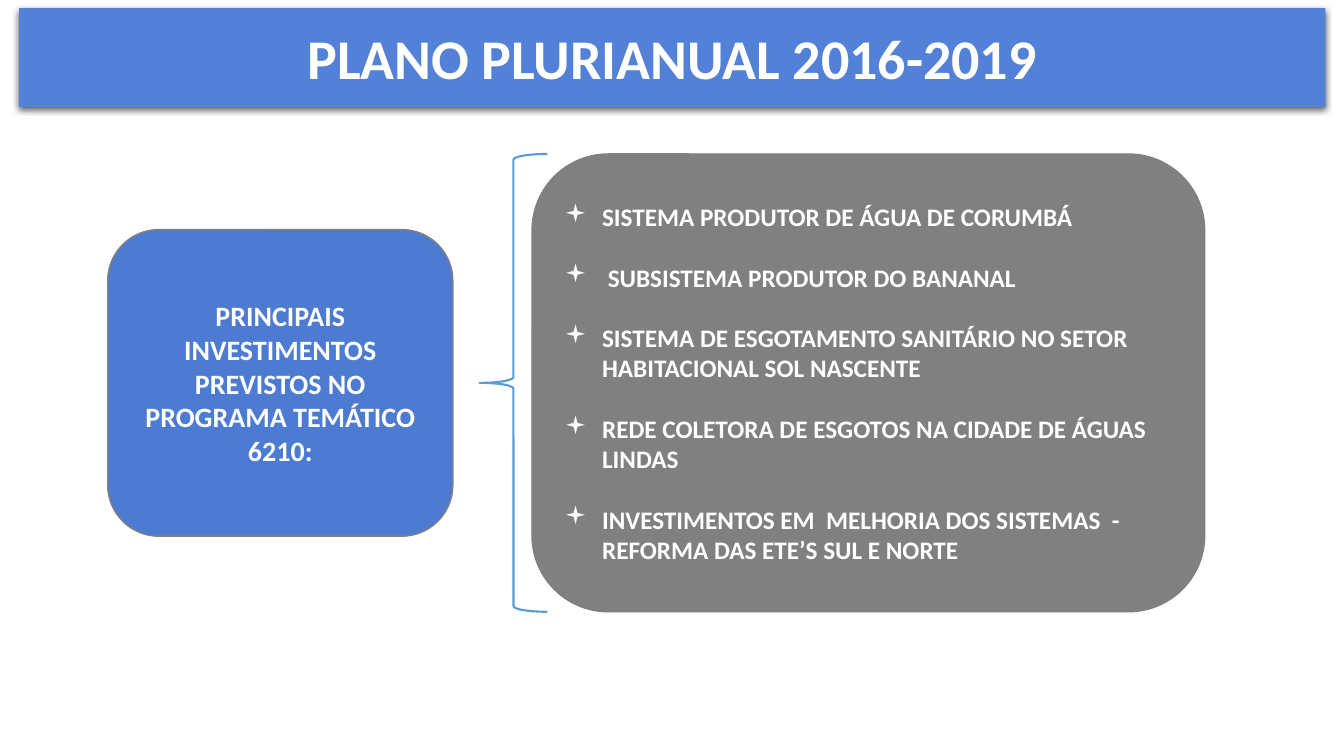
from dataclasses import dataclass

from lxml.etree import SubElement
from pptx import Presentation
from pptx.dml.color import RGBColor
from pptx.enum.shapes import MSO_SHAPE
from pptx.enum.text import MSO_ANCHOR, MSO_AUTO_SIZE, PP_ALIGN
from pptx.oxml import parse_xml
from pptx.oxml.ns import nsdecls, qn
from pptx.util import Pt


@dataclass(frozen=True)
class Theme:
    font: str = "Calibri"
    banner: str = "5381D7"
    program: str = "4C7BD1"
    gray: str = "808080"
    brace: str = "5B9BD5"
    text: str = "FFFFFF"
    title_size: float = 40
    program_size: float = 20
    list_size: float = 18
    list_gap: float = 21.6
    list_indent: float = 27


THEME = Theme()

TITLE = "PLANO PLURIANUAL 2016-2019"
PROGRAM = "PRINCIPAIS INVESTIMENTOS PREVISTOS NO PROGRAMA TEMÁTICO 6210:"
INVESTMENTS = [
    "SISTEMA PRODUTOR DE ÁGUA DE CORUMBÁ",
    " SUBSISTEMA PRODUTOR DO BANANAL",
    "SISTEMA DE ESGOTAMENTO SANITÁRIO NO SETOR HABITACIONAL SOL NASCENTE",
    "REDE COLETORA DE ESGOTOS NA CIDADE DE ÁGUAS LINDAS",
    "INVESTIMENTOS EM  MELHORIA DOS SISTEMAS  - REFORMA DAS ETE’S SUL E NORTE",
]


def add_bullet(para, indent, symbol):
    properties = para._p.get_or_add_pPr()
    properties.set("marL", str(Pt(indent)))
    properties.set("indent", str(-Pt(indent)))
    SubElement(properties, qn("a:buFont"), typeface="Wingdings")
    SubElement(properties, qn("a:buChar"), char=symbol)


def write_text(shape, paragraphs, *, size, align=PP_ALIGN.CENTER, gap=0, bullet=None):
    frame = shape.text_frame
    frame.word_wrap = True
    frame.auto_size = MSO_AUTO_SIZE.NONE
    frame.vertical_anchor = MSO_ANCHOR.MIDDLE
    for index, text in enumerate(paragraphs):
        para = frame.add_paragraph() if index else frame.paragraphs[0]
        para.alignment = align
        if index and gap:
            para.space_before = Pt(gap)
        if bullet:
            add_bullet(para, THEME.list_indent, bullet)
        span = para.add_run()
        span.text = text
        span.font.name = THEME.font
        span.font.size = Pt(size)
        span.font.bold = True
        span.font.color.rgb = RGBColor.from_string(THEME.text)


def add_outlined(page, kind, box, *, line, width, fill=None):
    shape = page.shapes.add_shape(kind, *map(Pt, box))
    shape.shadow.inherit = False
    if fill:
        shape.fill.solid()
        shape.fill.fore_color.rgb = RGBColor.from_string(fill)
    else:
        shape.fill.background()
    shape.line.color.rgb = RGBColor.from_string(line)
    shape.line.width = Pt(width)
    return shape


def build_banner(page, box):
    banner = page.shapes.title
    banner.left, banner.top, banner.width, banner.height = map(Pt, box)
    # Rounded outline, fill and soft shadow, in schema order
    properties = banner._element.spPr
    properties.append(parse_xml(
        f'<a:prstGeom {nsdecls("a")} prst="roundRect"><a:avLst/></a:prstGeom>'))
    banner.fill.solid()
    banner.fill.fore_color.rgb = RGBColor.from_string(THEME.banner)
    banner.line.fill.background()
    properties.append(parse_xml(
        f'<a:effectLst {nsdecls("a")}><a:outerShdw blurRad="{Pt(4.5)}" '
        f'dist="{Pt(1.5)}" dir="5400000" algn="ctr" rotWithShape="0">'
        '<a:srgbClr val="000000"><a:alpha val="63000"/></a:srgbClr>'
        '</a:outerShdw></a:effectLst>'))
    write_text(banner, [TITLE], size=THEME.title_size)


def build_investments(page, box):
    left, top, width, height = box

    # Program card, centred on the height of the region
    card_height = 219
    card = add_outlined(
        page, MSO_SHAPE.ROUNDED_RECTANGLE,
        (left, top + (height - card_height) / 2, 246.5, card_height),
        fill=THEME.program, line=THEME.gray, width=1)
    write_text(card, [PROGRAM], size=THEME.program_size)

    # Brace joining the card to the list
    add_outlined(page, MSO_SHAPE.LEFT_BRACE, (left + 265.5, top, 48.5, height),
                 line=THEME.brace, width=1.5)

    # List of investments
    list_offset = 303
    panel = add_outlined(
        page, MSO_SHAPE.ROUNDED_RECTANGLE,
        (left + list_offset, top, width - list_offset, height),
        fill=THEME.gray, line=THEME.gray, width=1)
    write_text(panel, INVESTMENTS, size=THEME.list_size, align=PP_ALIGN.LEFT,
               gap=THEME.list_gap, bullet="▪")


def main():
    deck = Presentation()
    deck.slide_width, deck.slide_height = Pt(960), Pt(540)
    page = deck.slides.add_slide(deck.slide_layouts.get_by_name("Title Only"))
    build_banner(page, (13.7, 5.8, 933, 70.6))
    build_investments(page, (77, 110, 783.5, 327))
    deck.save("out.pptx")


if __name__ == "__main__":
    main()
